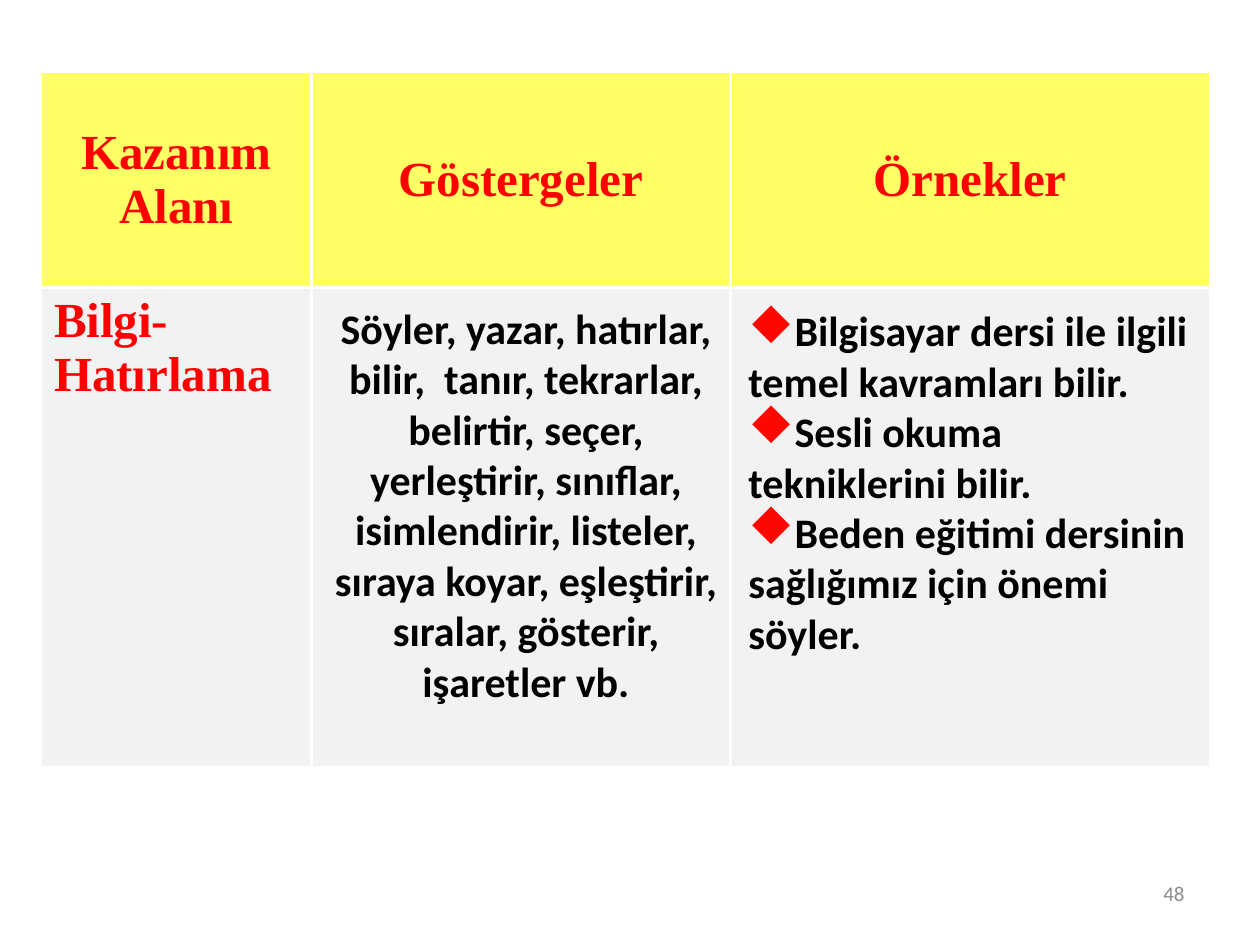
from lxml.etree import SubElement
from pptx import Presentation
from pptx.dml.color import RGBColor
from pptx.enum.text import MSO_ANCHOR, MSO_AUTO_SIZE, PP_ALIGN
from pptx.oxml import parse_xml
from pptx.oxml.ns import nsdecls, qn
from pptx.util import Inches, Pt

COLORS = {
    "header": "FFFF66",
    "body": "F2F2F2",
    "rule": "FFFFFF",
    "heading": "FF0000",
    "text": "000000",
    "bullet": "FF0701",
    "number": "8C8C8C",
}
HEADING = {"name": "Times New Roman", "size": Pt(28), "bold": True}
BODY = {"name": "Calibri", "size": Pt(24), "bold": True}
NUMBER = {"name": "Calibri", "size": Pt(12), "bold": False}
DIAMOND = {"typeface": "Wingdings", "char": "u"}
COLUMNS = [2.14, 3.33, 3.8]
ROWS = [1.71, 3.81]
LEFT, TOP = 0.33, 0.57
HEADERS = ["Kazanım Alanı", "Göstergeler", "Örnekler"]
LEVEL = "Bilgi-Hatırlama"
INDICATORS = (
    "Söyler, yazar, hatırlar, bilir,  tanır, tekrarlar, belirtir, seçer, "
    "yerleştirir, sınıflar, isimlendirir, listeler, sıraya koyar, "
    "eşleştirir, sıralar, gösterir, işaretler vb."
)
EXAMPLES = [
    "Bilgisayar dersi ile ilgili temel kavramları bilir.",
    "Sesli okuma tekniklerini bilir.",
    "Beden eğitimi dersinin sağlığımız için önemi söyler.",
]


def color(name):
    return RGBColor.from_string(COLORS[name])


def apply(target, values):
    for key, value in values.items():
        setattr(target, key, value)


def write(para, text, font, color_name, align):
    para.alignment = align
    span = para.add_run()
    span.text = text
    apply(span.font, font)
    span.font.color.rgb = color(color_name)


def add_bullet(para):
    props = para._p.get_or_add_pPr()
    bullet_color = SubElement(props, qn("a:buClr"))
    SubElement(bullet_color, qn("a:srgbClr"), val=COLORS["bullet"])
    SubElement(props, qn("a:buSzPct"), val="110000")
    SubElement(props, qn("a:buFont"), typeface=DIAMOND["typeface"], pitchFamily="2", charset="2")
    SubElement(props, qn("a:buChar"), char=DIAMOND["char"])


def add_text(slide, area, texts, font, color_name, align, frame_format, bulleted=False):
    box = slide.shapes.add_textbox(*map(Inches, area))
    frame = box.text_frame
    apply(frame, {"word_wrap": True, **frame_format})
    for index, text in enumerate(texts):
        para = frame.add_paragraph() if index else frame.paragraphs[0]
        write(para, text, font, color_name, align)
        if bulleted:
            add_bullet(para)


def draw_borders(cell, sides):
    props = cell._tc.get_or_add_tcPr()
    for index, side in enumerate(sides):
        props.insert(index, parse_xml(
            f'<a:ln{side} {nsdecls("a")} w="{Pt(2)}"><a:solidFill>'
            f'<a:srgbClr val="{COLORS["rule"]}"/></a:solidFill></a:ln{side}>'
        ))


def add_grid(slide):
    size = map(Inches, (LEFT, TOP, sum(COLUMNS), sum(ROWS)))
    table = slide.shapes.add_table(len(ROWS), len(COLUMNS), *size).table
    for column, width in zip(table.columns, COLUMNS):
        column.width = Inches(width)
    for row, height in zip(table.rows, ROWS):
        row.height = Inches(height)
    for row in range(len(ROWS)):
        for column in range(len(COLUMNS)):
            cell = table.cell(row, column)
            cell.fill.solid()
            cell.fill.fore_color.rgb = color("body" if row else "header")
            edges = {"L": column > 0, "R": column < len(COLUMNS) - 1, "T": row > 0, "B": True}
            draw_borders(cell, [side for side, shown in edges.items() if shown])
    for column, text in enumerate(HEADERS):
        cell = table.cell(0, column)
        cell.vertical_anchor = MSO_ANCHOR.MIDDLE
        para = cell.text_frame.paragraphs[0]
        write(para, text, HEADING, "heading", PP_ALIGN.CENTER)
        if column:
            props = para._p.get_or_add_pPr()
            props.set("marL", str(Inches(0.38)))
            props.set("indent", str(-Inches(0.38)))
    level = table.cell(1, 0).text_frame.paragraphs[0]
    write(level, LEVEL, HEADING, "heading", PP_ALIGN.LEFT)


def main():
    deck = Presentation()
    apply(deck, {"slide_width": Inches(10), "slide_height": Inches(7.5)})
    slide = deck.slides.add_slide(deck.slide_layouts[6])
    grow = {"auto_size": MSO_AUTO_SIZE.SHAPE_TO_FIT_TEXT}
    margins = ("margin_left", "margin_top", "margin_right", "margin_bottom")
    flush = {**grow, **dict.fromkeys(margins, 0)}
    add_text(slide, (7.17, 6.83, 2.33, 0.52), ["48"], NUMBER, "number",
             PP_ALIGN.RIGHT, {"vertical_anchor": MSO_ANCHOR.MIDDLE})
    add_grid(slide)
    add_text(slide, (2.48, 2.35, 3.39, 3.3), [INDICATORS], BODY, "text",
             PP_ALIGN.CENTER, grow)
    add_text(slide, (5.94, 2.42, 3.62, 2.8), EXAMPLES, BODY, "text",
             PP_ALIGN.LEFT, flush, bulleted=True)
    deck.save("out.pptx")


if __name__ == "__main__":
    main()
